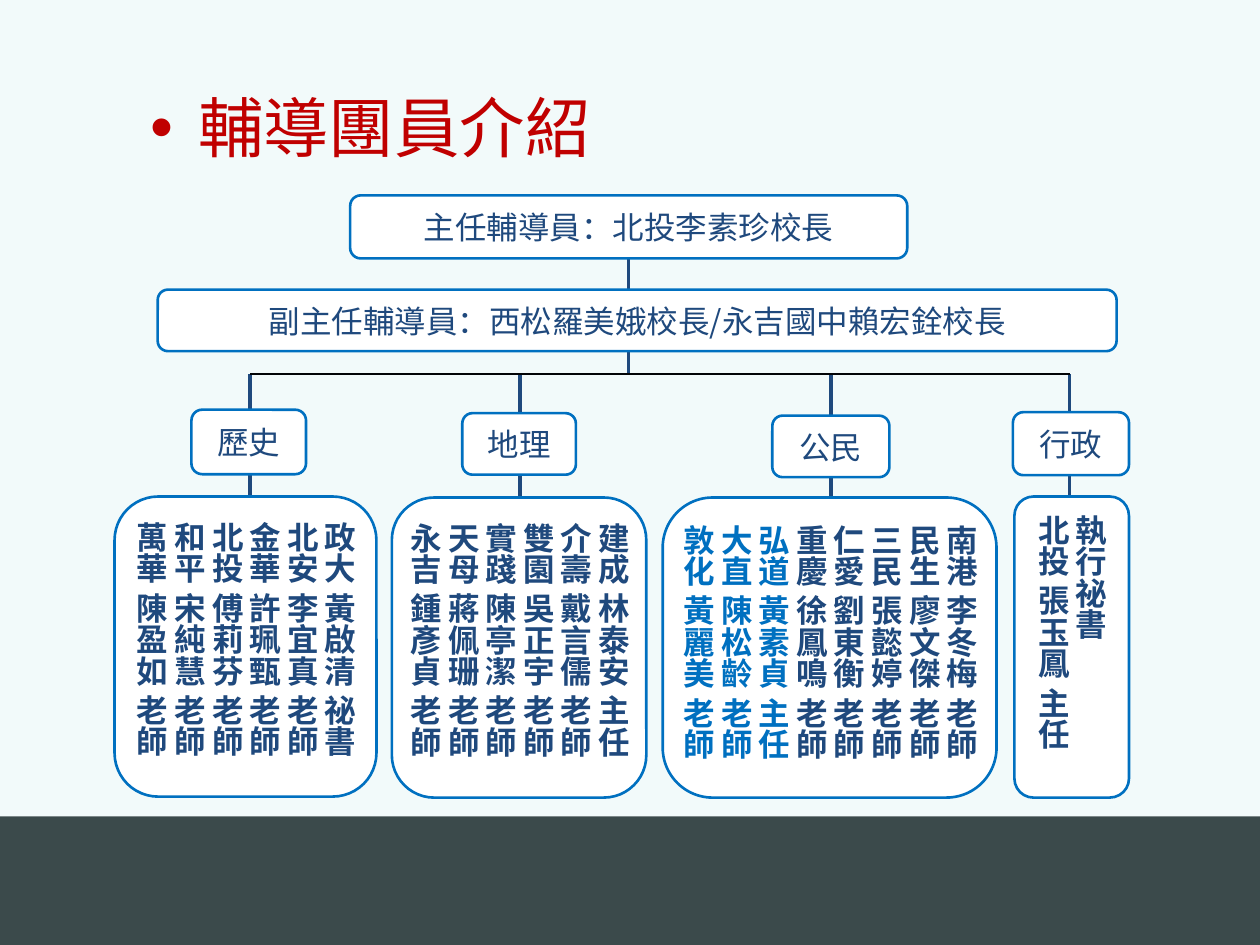
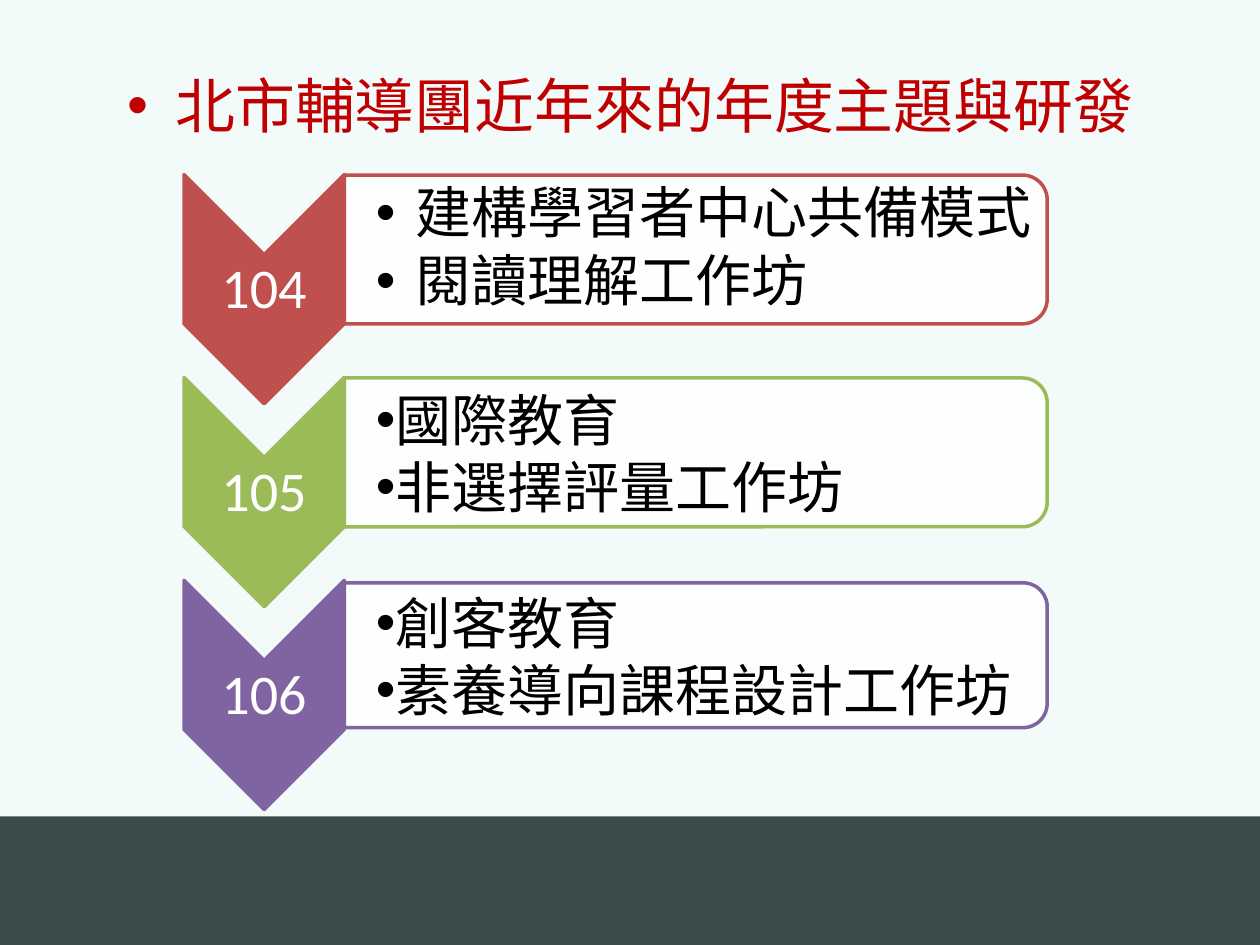
from lxml import etree
from pptx import Presentation, util as u
from pptx.dml.color import RGBColor
from pptx.enum import shapes, text
from pptx.oxml import ns

Cm, Pt = u.Cm, u.Pt
SHAPE = shapes.MSO_SHAPE
ALIGN = text.PP_ALIGN
CJK, LATIN = "Noto Sans CJK SC", "Calibri"
COLORS = {
    "tint": "73CBCF", "footer": "3B4A4B", "heading": "C00000",
    "navy": "1F497D", "blue": "0070C0", "bar": "020406",
    "white": "FFFFFF", "black": "000000",
    "red": "C0504D", "green": "9BBB59", "purple": "8064A2",
}


def rgb(name):
    return RGBColor.from_string(COLORS[name])


def sub(parent, tag, **attrs):
    return etree.SubElement(parent, ns.qn(tag), attrs)


class Deck:
    """Holds the style and the current slide."""

    def __init__(self):
        self.prs = Presentation()
        self.prs.slide_width, self.prs.slide_height = Cm(25.4), Cm(19.05)
        self.layout = self.prs.slide_layouts.get_by_name("Title Only")
        self.slide = None

    def new_slide(self, heading, box, size):
        self.slide = self.prs.slides.add_slide(self.layout)
        sp = self.slide.shapes.title
        sp.left, sp.top, sp.width, sp.height = map(Cm, box)
        self.fill_text(sp, [heading], size=size, color="heading", bullet=0.97)

    def bands(self):
        """Draw the two background bands and move them to the shared layout."""
        tree = self.layout.shapes.element
        bands = [((0, 0, 25.4, 16.46), "tint", 9), ((0, 16.46, 25.4, 2.59), "footer", 100)]
        for i, (box, fill, alpha) in enumerate(bands):
            tree.insert(2 + i, self.shape(SHAPE.RECTANGLE, box, fill, alpha=alpha).element)

    def shape(self, kind, box, fill, line=None, width=1.5, alpha=100, rotation=0):
        sp = self.slide.shapes.add_shape(kind, *map(Cm, box))
        sp.shadow.inherit = False
        sp.rotation = rotation
        sp.fill.solid()
        sp.fill.fore_color.rgb = rgb(fill)
        if alpha < 100:
            clr = sp.element.xpath(".//a:solidFill/a:srgbClr")[0]
            sub(clr, "a:alpha", val=str(alpha * 1000))
        if line:
            sp.line.color.rgb = rgb(line)
            sp.line.width = Pt(width)
        else:
            sp.line.fill.background()
        return sp

    def turned(self, kind, box, *args, **style):
        """Draw a shape turned a quarter so that it covers box."""
        x, y, w, h = box
        return self.shape(kind, (x + (w - h) / 2, y + (h - w) / 2, h, w),
                          *args, rotation=90, **style)

    def box(self, box, lines, **style):
        sp = self.shape(SHAPE.ROUNDED_RECTANGLE, box, "white", "blue")
        self.fill_text(sp, lines, **style)

    def textbox(self, box, lines, **style):
        self.fill_text(self.slide.shapes.add_textbox(*map(Cm, box)), lines, **style)

    def line(self, x1, y1, x2, y2, color="navy", width=2.25):
        c = self.slide.shapes.add_connector(
            shapes.MSO_CONNECTOR.STRAIGHT, *map(Cm, (x1, y1, x2, y2)))
        c.line.color.rgb = rgb(color)
        c.line.width = Pt(width)
        sub(c.element.spPr, "a:effectLst")

    def fill_text(self, sp, lines, size=18, color="navy", font=CJK, bold=False,
                  bullet=None, vertical=False, insets=None, blue_last=0, **para):
        tf = sp.text_frame
        frame = {"word_wrap": True, "auto_size": text.MSO_AUTO_SIZE.NONE,
                 "vertical_anchor": text.MSO_ANCHOR.MIDDLE}
        if insets:
            sides = ("margin_left", "margin_top", "margin_right", "margin_bottom")
            frame.update(zip(sides, map(Cm, insets)))
        for name, value in frame.items():
            setattr(tf, name, value)
        if vertical:
            sp.element.xpath(".//a:bodyPr")[0].set("vert", "eaVert")
        for i, line in enumerate(lines):
            p = tf.paragraphs[0] if i == 0 else tf.add_paragraph()
            if bullet is not None:
                pPr = p._p.get_or_add_pPr()
                pPr.set("marL", str(Cm(bullet)))
                pPr.set("indent", str(-Cm(bullet)))
                sub(pPr, "a:buFont", typeface="Arial")
                sub(pPr, "a:buChar", char="•")
            for name, value in {"alignment": ALIGN.LEFT, **para}.items():
                setattr(p, name, value)
            r = p.add_run()
            r.text = line
            ink = "blue" if i >= len(lines) - blue_last else color
            for name, value in {"size": Pt(size), "bold": bold, "name": font}.items():
                setattr(r.font, name, value)
            r.font.color.rgb = rgb(ink)
            sub(r._r.get_or_add_rPr(), "a:ea", typeface=font)


# Subject, label box, list box, stem x, members, number of blue members at the end
BRANCHES = [
    ("歷史", (3.86, 8.26, 2.31, 1.3), (2.31, 10.01, 5.28, 6.05), 5.04,
     ["政大 黃啟清 祕書", "北安 李宜真 老師", "金華 許珮甄 老師",
      "北投 傅莉芬 老師", "和平 宋純慧 老師", "萬華 陳盈如 老師"], 0),
    ("地理", (9.32, 8.33, 2.29, 1.24), (7.9, 10.03, 5.13, 6.05), 10.49,
     ["建成 林泰安 主任", "介壽 戴言儒 老師", "雙園 吳正宇 老師",
      "實踐 陳亭潔 老師", "天母 蔣佩珊 老師", "永吉 鍾彥貞 老師"], 0),
    ("公民", (15.57, 8.38, 2.36, 1.24), (13.36, 10.03, 6.73, 6.05), 16.76,
     ["南港 李冬梅 老師", "民生 廖文傑 老師", "三民 張懿婷 老師", "仁愛 劉東衡 老師",
      "重慶 徐鳳鳴 老師", "弘道 黃素貞 主任", "大直 陳松齡 老師", "敦化 黃麗美 老師"], 3),
    ("行政", (20.42, 8.31, 2.34, 1.27), (20.45, 10.01, 2.31, 6.07), 21.56,
     ["執行祕書", "北投 張玉鳳 主任"], 0),
]

# Year, colour, card height, topics, paragraph format
LOOSE = {"bullet": 0}
TIGHT = {"bullet": 0.79, "line_spacing": 0.9, "space_after": Pt(4)}
YEARS = [
    ("104", "red", 3.0, ["建構學習者中心共備模式", "閱讀理解工作坊"], TIGHT),
    ("105", "green", 3.0, ["國際教育", "非選擇評量工作坊"], LOOSE),
    ("106", "purple", 2.92, ["創客教育", "素養導向課程設計工作坊"], LOOSE),
]


def team_slide(s):
    s.new_slide("輔導團員介紹", (2.77, 1.52, 9.53, 2.06), 37.4)
    s.bands()
    # Leaders and trunk
    trunk_x, bar_y = 12.67, 7.54
    s.line(trunk_x, 5.21, trunk_x, 5.84)
    s.line(trunk_x, 7.08, trunk_x, bar_y)
    s.box((7.06, 3.94, 11.23, 1.27), ["主任輔導員：北投李素珍校長"], alignment=ALIGN.CENTER)
    s.box((3.18, 5.84, 19.33, 1.24), ["副主任輔導員：西松羅美娥校長/永吉國中賴宏銓校長"],
          alignment=ALIGN.CENTER)
    # Subject branches
    for subject, label, card, x, members, blue in BRANCHES:
        s.line(x, bar_y, x, label[1])
        s.line(x, label[1] + label[3], x, card[1])
        s.box(label, [subject], alignment=ALIGN.CENTER)
        s.box(card, members, bold=True, vertical=True, blue_last=blue,
              line_spacing=Pt(21.5))
    s.line(BRANCHES[0][3], bar_y, BRANCHES[-1][3], bar_y, "bar", 1.5)


def themes_slide(s):
    s.new_slide("北市輔導團近年來的年度主題與研發", (2.31, 0.91, 20.93, 2.39), 34.2)
    left, arrow_w, arrow_h, first_y, pitch = 3.71, 3.23, 4.62, 5.03, 4.09
    right = left + arrow_w
    for i, (year, color, h, topics, style) in enumerate(YEARS):
        y = first_y + i * pitch  # middle of the card
        s.turned(SHAPE.CHEVRON, (left, y + 0.8 - arrow_h / 2, arrow_w, arrow_h),
                 color, color, 2)
        s.textbox((left, y + 0.12, arrow_w, 1.4), [year], size=32, color="white",
                  font=LATIN, insets=[0.05] * 4, alignment=ALIGN.CENTER, line_spacing=0.9)
        s.turned(SHAPE.ROUND_2_SAME_RECTANGLE, (right, y - h / 2, 14.17, h),
                 "white", color, 2, alpha=90)
        s.textbox((right, y - 1.35, 14.02, 2.7), topics, size=32, color="black",
                  font=LATIN, insets=(0.64, 0.05, 0.05, 0.05), **style)


def main():
    s = Deck()
    team_slide(s)
    themes_slide(s)
    s.prs.save("out.pptx")


if __name__ == "__main__":
    main()
